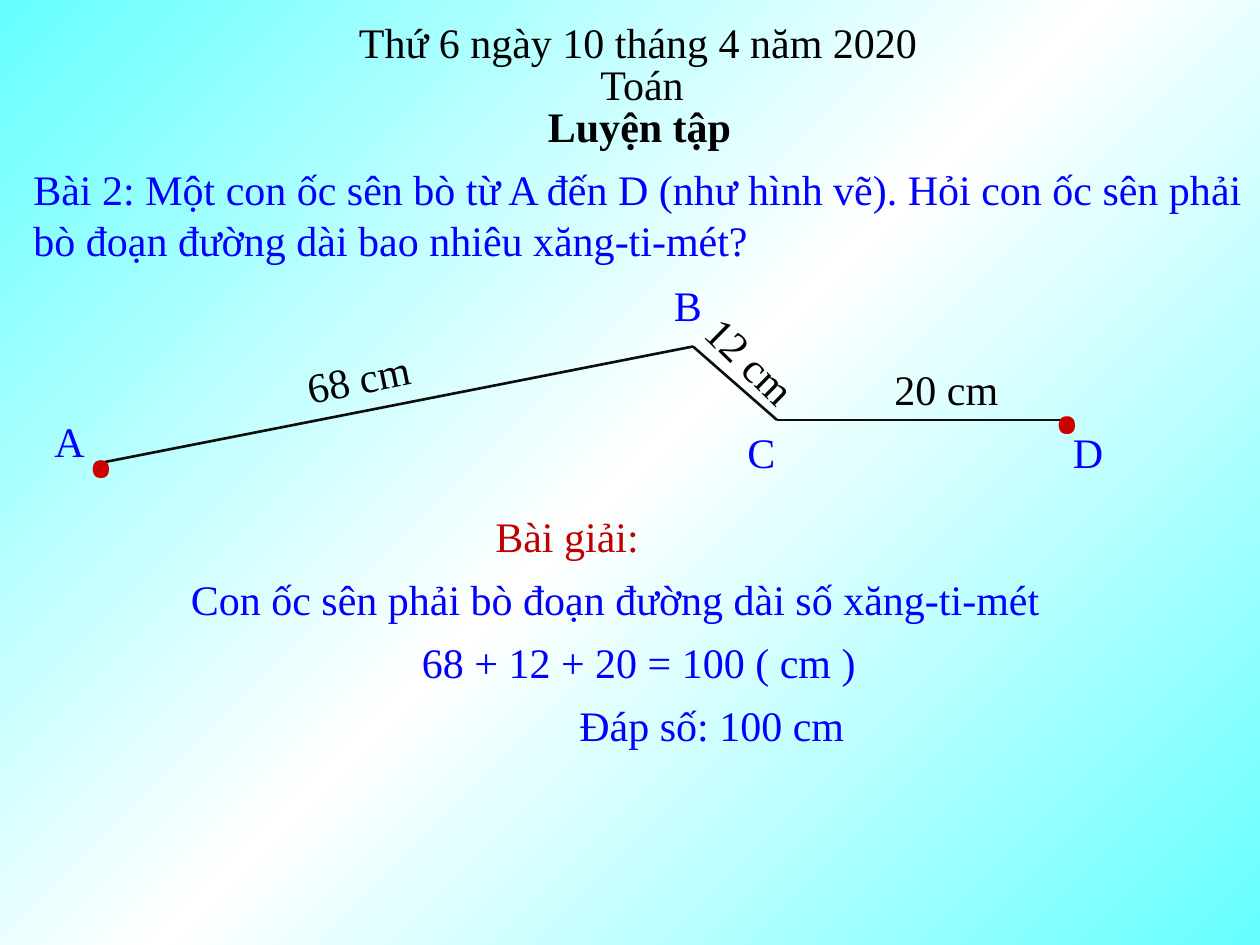
from copy import deepcopy
from dataclasses import dataclass

from pptx import Presentation
from pptx.dml.color import RGBColor
from pptx.enum.shapes import MSO_CONNECTOR
from pptx.enum.text import MSO_AUTO_SIZE
from pptx.oxml.ns import qn
from pptx.util import Inches, Pt

STRAIGHT = MSO_CONNECTOR.STRAIGHT
FIT_SHAPE = MSO_AUTO_SIZE.SHAPE_TO_FIT_TEXT
UNIT = Inches(1) / 12  # the slide is a grid of 120 columns by 90 rows
LINE_H = 6             # rows taken by one line of text


@dataclass(frozen=True)
class Theme:
    font: str = "Times New Roman"
    dot_font: str = "Cambria"
    size: int = 24
    dot_size: int = 88
    line_width: float = 1.5
    black: str = "000000"
    blue: str = "0000FF"
    red: str = "C00000"
    dot: str = "CC0000"
    line: str = "0D0D0D"
    gradient: tuple = ((0, "66FFFF"), (0.5, "FFFFFF"), (1, "66FFFF"))


T = Theme()


def grid(*values):
    return [round(v * UNIT) for v in values]


def rgb(value):
    return RGBColor.from_string(value)


def paint_background(s):
    fill = s.background.fill
    fill.gradient()
    fill.gradient_angle = 315  # counter-clockwise: top left to bottom right
    stops = next(s.element.iter(qn("a:gsLst")))
    stops.append(deepcopy(stops[0]))
    for stop, (position, color) in zip(fill.gradient_stops, T.gradient):
        stop.position = position
        stop.color.rgb = rgb(color)


def add_text(s, text, col, row, cols, rows=LINE_H, color=T.blue, wrap=True,
             rotation=0, **font):
    sp = s.shapes.add_textbox(*grid(col, row, cols, rows))
    sp.rotation = rotation
    tf = sp.text_frame
    tf.word_wrap = wrap
    tf.auto_size = FIT_SHAPE
    r = tf.paragraphs[0].add_run()
    r.text = text
    r.font.color.rgb = rgb(color)
    for name, value in ({"name": T.font, "size": Pt(T.size)} | font).items():
        setattr(r.font, name, value)


def add_segment(s, start, end):
    line = s.shapes.add_connector(STRAIGHT, *grid(*start, *end))
    line.line.color.rgb = rgb(T.line)
    line.line.width = Pt(T.line_width)
    sp_pr = line._element.spPr
    sp_pr.append(sp_pr.makeelement(qn("a:effectLst"), {}))


def main():
    prs = Presentation()
    prs.slide_width, prs.slide_height = grid(120, 90)
    s = prs.slides.add_slide(prs.slide_layouts[6])
    paint_background(s)

    # Heading: date, subject, lesson
    for text, col, row, cols, bold in (
        ("Toán", 56, 5, 10.4, None),
        ("Thứ 6 ngày 10 tháng 4 năm 2020", 33, 1, 56, None),
        ("Luyện tập", 51, 9, 20, True),
    ):
        add_text(s, text, col, row, cols, color=T.black, wrap=False, bold=bold)

    # Problem
    add_text(s, "Bài 2: Một con ốc sên bò từ A đến D (như hình vẽ). Hỏi con ốc "
             "sên phải bò đoạn đường dài bao nhiêu xăng-ti-mét?",
             2, 15, 118, rows=11)

    # Solution, one line every LINE_H rows
    for i, (text, col, cols, color) in enumerate((
        ("Bài giải:", 46, 17, T.red),
        ("Con ốc sên phải bò đoạn đường dài số xăng-ti-mét", 17, 85, T.blue),
        ("68 + 12 + 20 = 100 ( cm )", 39, 52, T.blue),
        ("Đáp số: 100 cm", 54, 29, T.blue),
    )):
        add_text(s, text, col, 48 + i * LINE_H, cols, color=color)

    # Path from A to D
    points = ((10, 44), (66, 33), (74, 40), (102, 40))
    for start, end in zip(points, points[1:]):
        add_segment(s, start, end)

    # Dots at both ends
    for col, row in ((7, 30.2), (99, 26)):
        add_text(s, ".", col, row, 7, rows=18.8, color=T.dot,
                 name=T.dot_font, size=Pt(T.dot_size))

    # Point names
    for name, col, row in (("A", 4, 39), ("B", 63, 26), ("C", 70, 40),
                           ("D", 101, 40)):
        add_text(s, name, col, row, 6)

    # Segment lengths, turned along their segments
    for text, col, row, rotation in (("20 cm", 84, 34, 0),
                                     ("12 cm", 65.4, 31.4, 44.6),
                                     ("68 cm", 28, 33, 348.5)):
        add_text(s, text, col, row, 12.4, color=T.black, wrap=False,
                 rotation=rotation)

    prs.save("out.pptx")


if __name__ == "__main__":
    main()
